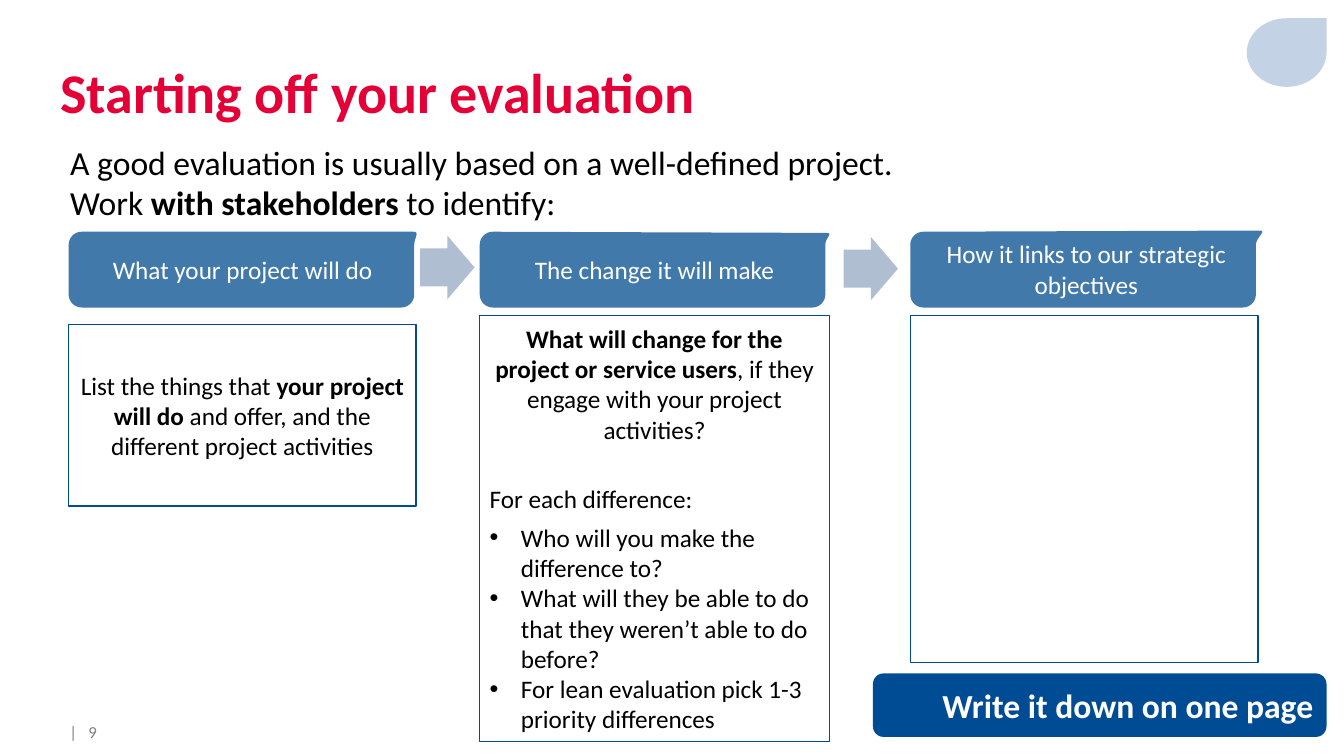
from dataclasses import dataclass
from typing import Optional

from lxml import etree
from pptx import Presentation
from pptx import util as u
from pptx.dml.color import RGBColor
from pptx.enum import shapes, text
from pptx.oxml import ns

FONT = "Calibri"
RED, NAVY, BLUE = "E40037", "004C94", "4179AA"
ARROW_BLUE, PALE_BLUE = "B0BED1", "C3D3E5"
BLACK, WHITE, GREY = "000000", "FFFFFF", "808080"
LEFT, CENTER = text.PP_ALIGN.LEFT, text.PP_ALIGN.CENTER
TOP, MIDDLE = text.MSO_ANCHOR.TOP, text.MSO_ANCHOR.MIDDLE
SHAPE = shapes.MSO_SHAPE

HEADER_TOP, HEADER_HEIGHT, CORNER = 5.84, 1.91, 0.33
CURVE_STEPS = 8


@dataclass
class Para:
    """One paragraph; **...** marks bold words."""
    words: str
    align: Optional[text.PP_ALIGN] = CENTER
    before: float = 0
    bullet: bool = False
    tab: float = 0


@dataclass
class Stage:
    """One column: header tab with a flared corner, and a panel below."""
    left: float
    header_width: float
    flare_x: float
    flare_y: float
    heading: str
    panel_top: float
    panel_width: float
    panel_height: float
    details: list[Para]


@dataclass
class Block:
    """A plain filled preset shape."""
    kind: SHAPE
    left: float
    top: float
    width: float
    height: float
    fill: str
    adjustments: tuple[float, ...] = ()


STAGES = [
    Stage(1.73, 8.71, -0.03, 0, "What your project will do", 8.18, 8.76, 4.57, [
        Para("List the things that **your project will do** and offer, "
             "and the different project activities"),
    ]),
    Stage(12.09, 8.71, 0.03, 0.03, "The change it will make", 7.95, 8.81, 10.74, [
        Para("**What will change for the project or service users**, "
             "if they engage with your project activities?"),
        Para("For each difference:", LEFT, before=28),
        Para("Who will you make the difference to?", LEFT, before=6, bullet=True),
        Para("What will they be able to do that they weren’t able to do before?",
             LEFT, bullet=True),
        Para("For lean evaluation pick 1-3 priority differences", LEFT, bullet=True),
    ]),
    Stage(22.94, 8.71, 0.1, -0.03, "How it links to our strategic objectives",
          7.95, 8.76, 8.74, []),
]

BLOCKS = [
    Block(SHAPE.RIGHT_ARROW, 10.59, 5.94, 1.37, 1.6, ARROW_BLUE, (0.6, 0.5)),
    Block(SHAPE.RIGHT_ARROW, 21.26, 5.97, 1.37, 1.6, ARROW_BLUE, (0.6, 0.5)),
    Block(SHAPE.ROUNDED_RECTANGLE, 22, 16.97, 11.43, 1.6, NAVY),
    Block(SHAPE.TEAR, 31.42, 0.46, 2.01, 1.73, PALE_BLUE),
]


def color(hex_value: str) -> RGBColor:
    return RGBColor.from_string(hex_value)


def style(shape, fill: Optional[str] = None, line: Optional[str] = None) -> None:
    shape.shadow.inherit = False
    if fill:
        shape.fill.solid()
        shape.fill.fore_color.rgb = color(fill)
    else:
        shape.fill.background()
    if line:
        shape.line.color.rgb = color(line)
        shape.line.width = u.Pt(1)
    else:
        shape.line.fill.background()


def write(shape, paras: list[Para], *, size: float = 18, ink: str = BLACK,
          bold: bool = False, anchor=MIDDLE,
          insets: tuple[float, ...] = (0.25, 0.13, 0.25, 0.13)) -> None:
    frame = shape.text_frame
    frame.word_wrap = True
    frame.vertical_anchor = anchor
    (frame.margin_left, frame.margin_top,
     frame.margin_right, frame.margin_bottom) = map(u.Cm, insets)
    for index, para in enumerate(paras):
        paragraph = frame.add_paragraph() if index else frame.paragraphs[0]
        properties = paragraph._p.get_or_add_pPr()
        if para.bullet:
            properties.set("marL", str(u.Cm(0.79)))
            properties.set("indent", str(-u.Cm(0.79)))
            etree.SubElement(properties, ns.qn("a:buFont"), typeface="Arial")
            etree.SubElement(properties, ns.qn("a:buChar"), char="•")
        if para.tab:
            tabs = etree.SubElement(properties, ns.qn("a:tabLst"))
            etree.SubElement(tabs, ns.qn("a:tab"), pos=str(u.Cm(para.tab)), algn="l")
        paragraph.alignment = para.align
        if para.before:
            paragraph.space_before = u.Pt(para.before)
        for part, words in enumerate(para.words.split("**")):
            if words:
                run = paragraph.add_run()
                run.text = words
                run.font.name = FONT
                run.font.size = u.Pt(size)
                run.font.bold = bold or part % 2 == 1
                run.font.color.rgb = color(ink)


def add_label(slide, left: float, top: float, width: float, height: float,
              paras: list[Para], **text_format) -> None:
    box = slide.shapes.add_textbox(u.Cm(left), u.Cm(top), u.Cm(width), u.Cm(height))
    write(box, paras, **text_format)


def add_block(slide, block: Block) -> None:
    shape = slide.shapes.add_shape(block.kind, u.Cm(block.left), u.Cm(block.top),
                                   u.Cm(block.width), u.Cm(block.height))
    for index, value in enumerate(block.adjustments):
        shape.adjustments[index] = value
    style(shape, fill=block.fill)


def curve(*controls: tuple[float, float]) -> list[tuple[float, float]]:
    """Points along a cubic curve given by four control points."""
    points = []
    for step in range(CURVE_STEPS + 1):
        t = step / CURVE_STEPS
        weights = ((1 - t) ** 3, 3 * t * (1 - t) ** 2, 3 * t * t * (1 - t), t ** 3)
        points.append(tuple(sum(w * c[axis] for w, c in zip(weights, controls))
                            for axis in (0, 1)))
    return points


def add_header(slide, stage: Stage) -> None:
    left, right = stage.left, stage.left + stage.header_width
    top, bottom = HEADER_TOP, HEADER_TOP + HEADER_HEIGHT
    tip_x, tip_y = right + stage.flare_x, top + stage.flare_y
    pull = 0.55 * CORNER
    near = CORNER - pull
    outline = [
        *curve((left, top + CORNER), (left, top + near),
               (left + near, top), (left + CORNER, top)),
        *curve((tip_x, tip_y), (tip_x + pull, tip_y),
               (right, top + near), (right, top + CORNER)),
        *curve((right, bottom - CORNER), (right, bottom - near),
               (right - near, bottom), (right - CORNER, bottom)),
        *curve((left + CORNER, bottom), (left + near, bottom),
               (left, bottom - near), (left, bottom - CORNER)),
    ]
    corners = [(u.Cm(x), u.Cm(y)) for x, y in outline]
    builder = slide.shapes.build_freeform(*corners[0])
    builder.add_line_segments(corners[1:], close=True)
    header = builder.convert_to_shape()
    style(header, fill=BLUE)
    write(header, [Para(stage.heading)], ink=WHITE)


def add_panel(slide, stage: Stage) -> None:
    panel = slide.shapes.add_shape(SHAPE.RECTANGLE, u.Cm(stage.left), u.Cm(stage.panel_top),
                                   u.Cm(stage.panel_width), u.Cm(stage.panel_height))
    style(panel, line=NAVY)
    write(panel, stage.details)


def main() -> None:
    deck = Presentation()
    deck.slide_width, deck.slide_height = u.Cm(33.87), u.Cm(19.05)
    slide = deck.slides.add_slide(deck.slide_layouts[6])

    # Title and introduction
    add_label(slide, 1.52, 1.45, 20.57, 2.95, [Para("Starting off your evaluation", LEFT)],
              size=40, ink=RED, bold=True, anchor=TOP, insets=(0, 0, 0, 0))
    add_label(slide, 1.52, 3.45, 25.45, 1.9, [
        Para("A good evaluation is usually based on a well-defined project.", LEFT),
        Para("Work** with stakeholders **to identify:", LEFT),
    ], size=24, anchor=TOP)

    # Arrows, button and corner drop
    for block in BLOCKS:
        add_block(slide, block)

    # Project stages
    for stage in STAGES:
        add_header(slide, stage)
        add_panel(slide, stage)

    # Button text and page number
    add_label(slide, 23.75, 17.25, 9.6, 1.45, [Para("Write it down on one page", LEFT)],
              size=24, ink=WHITE, bold=True, anchor=TOP, insets=(0, 0, 0, 0))
    add_label(slide, 0.3, 18.26, 2.4, 0.38, [Para("|\t9", LEFT, tab=0.48)],
              size=12, ink=GREY, insets=(1.45, 0.13, 0, 0.13))

    deck.save("out.pptx")


if __name__ == "__main__":
    main()
